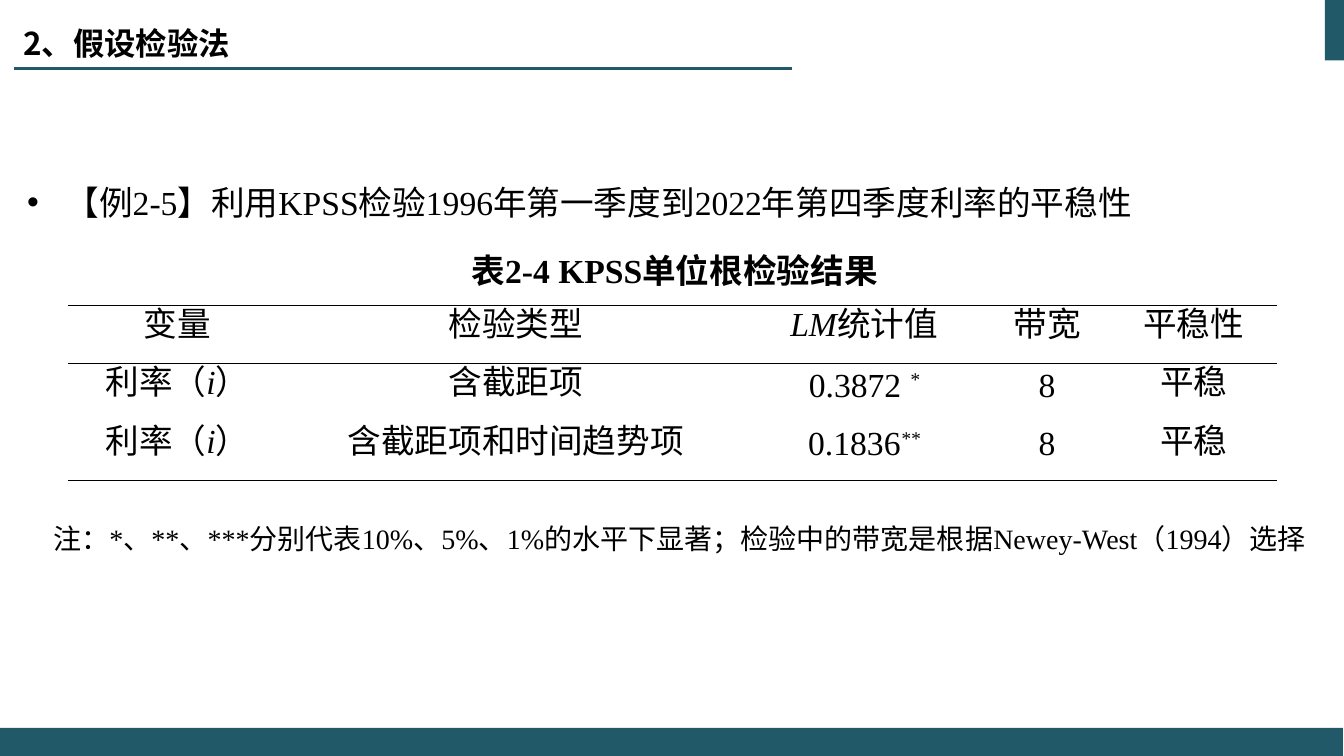
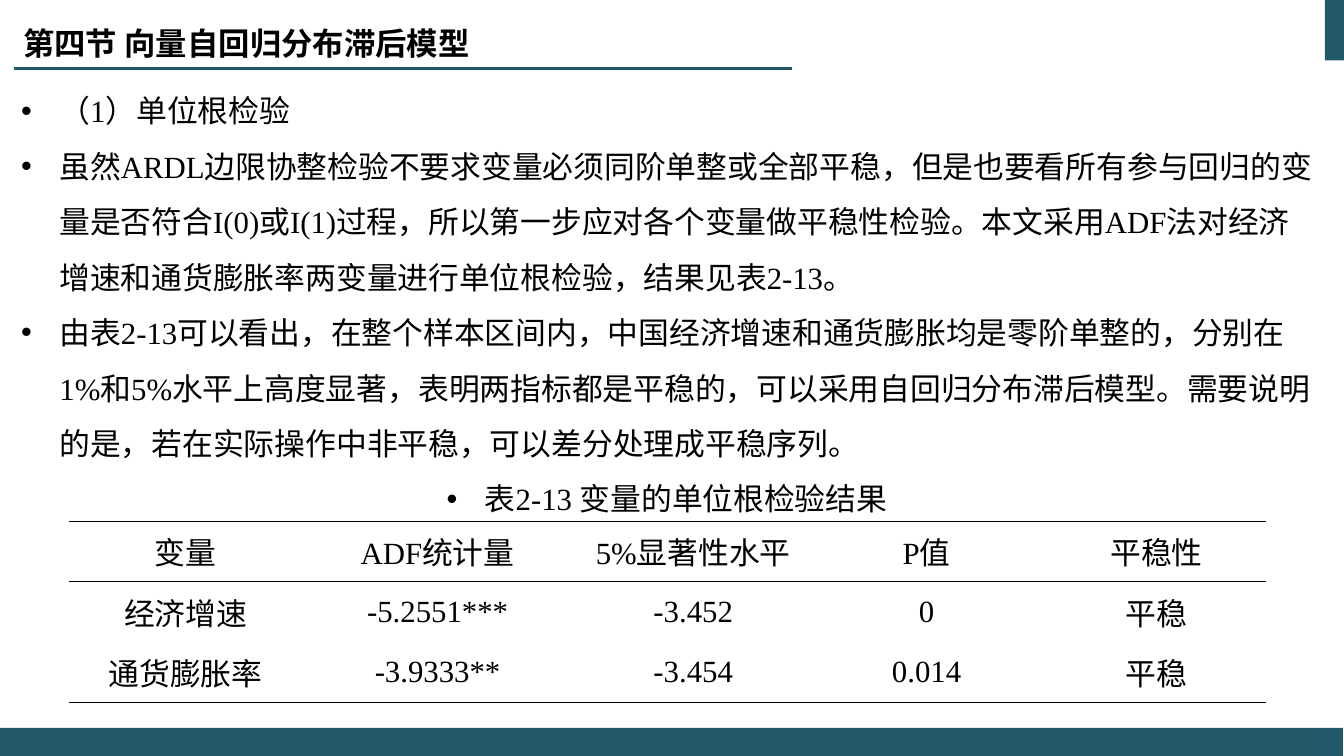
from dataclasses import dataclass

from lxml.etree import SubElement
from pptx import Presentation
from pptx.dml.color import RGBColor
from pptx.enum.shapes import MSO_CONNECTOR, MSO_SHAPE
from pptx.enum.text import MSO_ANCHOR, MSO_AUTO_SIZE, PP_ALIGN
from pptx.oxml.ns import qn
from pptx.util import Inches, Pt


@dataclass(frozen=True)
class Theme:
    teal: RGBColor = RGBColor(0x21, 0x59, 0x68)
    ink: RGBColor = RGBColor(0, 0, 0)
    latin: str = "Times New Roman"
    cjk: str = "Noto Sans CJK SC"
    title_size: int = 28
    note_size: int = 20
    rule_width: float = 1
    line_height: float = 1.2


THEME = Theme()

# Content: (kind, text) paragraphs and table rows; a cell may hold (text, style) runs
RATE = [("利率（", ""), ("i", "italic"), ("）", "")]
SLIDES = [
    {
        "title": "2、假设检验法",
        "title_width": 5.91,
        "body_box": (0.17, 1.47, 13.04, 4.9),
        "size": 24,
        "spacing": 1.7,
        "body": [
            ("bullet", "【例2-5】利用KPSS检验1996年第一季度到2022年第四季度利率的平稳性"),
            ("caption", "表2-4 KPSS单位根检验结果"),
            ("note", "注：*、**、***分别代表10%、5%、1%的水平下显著；"
                     "检验中的带宽是根据Newey-West（1994）选择"),
        ],
        "table_at": (0.67, 3.03),
        "columns": (2.18, 4.53, 2.38, 1.25, 1.66),
        "row_height": 0.58,
        "cell_line": 16,
        "cell_indent": 0,
        "rows": [
            ["变量", "检验类型", [("LM", "italic"), ("统计值", "")], "带宽", "平稳性"],
            [RATE, "含截距项", [("0.3872 ", ""), ("*", "super")], "8", "平稳"],
            [RATE, "含截距项和时间趋势项", [("0.1836", ""), ("**", "super")], "8", "平稳"],
        ],
    },
    {
        "title": "第四节 向量自回归分布滞后模型",
        "title_width": 8.31,
        "body_box": (0.11, 0.68, 13.01, 4.49),
        "size": 22,
        "spacing": 1.5,
        "body": [
            ("bullet", "（1）单位根检验"),
            ("bullet", "虽然ARDL边限协整检验不要求变量必须同阶单整或全部平稳，但是也要看所有参与回归的"
                       "变量是否符合I(0)或I(1)过程，所以第一步应对各个变量做平稳性检验。本文采用ADF法对"
                       "经济增速和通货膨胀率两变量进行单位根检验，结果见表2-13。"),
            ("bullet", "由表2-13可以看出，在整个样本区间内，中国经济增速和通货膨胀均是零阶单整的，分别在"
                       "1%和5%水平上高度显著，表明两指标都是平稳的，可以采用自回归分布滞后模型。需要说"
                       "明的是，若在实际操作中非平稳，可以差分处理成平稳序列。"),
            ("bullet caption", "表2-13 变量的单位根检验结果"),
        ],
        "table_at": (0.68, 5.17),
        "columns": (2.25, 2.75, 2.32, 2.31, 2.25),
        "row_height": 0.6,
        "cell_line": None,
        "cell_indent": 0.07,
        "rows": [
            ["变量", "ADF统计量", "5%显著性水平", "P值", "平稳性"],
            ["经济增速", "-5.2551***", "-3.452", "0", "平稳"],
            ["通货膨胀率", "-3.9333**", "-3.454", "0.014", "平稳"],
        ],
    },
]


def style_run(run, size, latin=THEME.latin, bold=False):
    font = run.font
    font.size, font.bold = Pt(size), bold
    font.color.rgb = THEME.ink
    font.name = latin
    SubElement(run.font._element, qn("a:ea"), typeface=THEME.cjk)


def place(part, left, top, width, height):
    part.left, part.top = Inches(left), Inches(top)
    part.width, part.height = Inches(width), Inches(height)


def set_indent(paragraph, left, first=0, bullet=False):
    props = paragraph._p.get_or_add_pPr()
    props.set("marL", str(Inches(left)))
    props.set("indent", str(Inches(first)))
    if bullet:
        SubElement(props, qn("a:buFont"), typeface="Arial")
        SubElement(props, qn("a:buChar"), char="•")
    else:
        SubElement(props, qn("a:buNone"))


def add_bands(master, slide):
    """Draw the shared bands and title rule, then move them to the master."""
    corner = slide.shapes.add_shape(
        MSO_SHAPE.RECTANGLE, Inches(13.14), 0, Inches(0.2), Inches(0.6))
    footer = slide.shapes.add_shape(
        MSO_SHAPE.RECTANGLE, 0, Inches(7.22), Inches(13.32), Inches(0.28))
    for band in (corner, footer):
        band.shadow.inherit = False
        band.fill.solid()
        band.fill.fore_color.rgb = THEME.teal
        band.line.fill.background()
    title_rule = slide.shapes.add_connector(
        MSO_CONNECTOR.STRAIGHT, Inches(7.86), Inches(0.68), Inches(0.14), Inches(0.68))
    title_rule.line.color.rgb = THEME.teal
    title_rule.line.width = Pt(1.5)
    SubElement(title_rule.element.spPr, qn("a:effectLst"))
    for number, part in enumerate((corner, title_rule, footer)):
        part.element.xpath(".//p:cNvPr")[0].set("id", str(101 + number))
        master.shapes.element.insert(2 + number, part.element)


def fill_title(slide, content):
    title = slide.shapes.title
    place(title, 0.13, -0.03, content["title_width"], 0.85)
    frame = title.text_frame
    frame.text = content["title"]
    frame.auto_size = MSO_AUTO_SIZE.NONE
    frame.vertical_anchor = MSO_ANCHOR.MIDDLE
    paragraph = frame.paragraphs[0]
    paragraph.alignment = PP_ALIGN.LEFT
    run = paragraph.runs[0]
    style_run(run, THEME.title_size, THEME.cjk, bold=True)
    run.font._element.set("cap", "small")


def fill_body(slide, content):
    body = slide.placeholders[1]
    place(body, *content["body_box"])
    frame = body.text_frame
    frame.text = "\n".join(text for _, text in content["body"])
    frame.auto_size = MSO_AUTO_SIZE.NONE
    frame.vertical_anchor = MSO_ANCHOR.TOP
    for paragraph, (kind, _) in zip(frame.paragraphs, content["body"]):
        is_note = kind == "note"
        size = THEME.note_size if is_note else content["size"]
        if "bullet" in kind:
            set_indent(paragraph, 0.38, -0.38, bullet=True)
        else:
            set_indent(paragraph, 0.1 if is_note else 0)
        paragraph.alignment = PP_ALIGN.LEFT if kind == "bullet" else PP_ALIGN.CENTER
        paragraph.line_spacing = Pt(round(size * content["spacing"] * THEME.line_height, 1))
        paragraph.space_before = Pt(148 if is_note else 0)
        style_run(paragraph.runs[0], size, bold=kind == "caption")


def set_borders(cell, ruled):
    props = cell._tc.get_or_add_tcPr()
    for side in ("lnL", "lnR", "lnT", "lnB"):
        border = SubElement(props, qn(f"a:{side}"), w=str(Pt(THEME.rule_width)))
        if side in ruled:
            fill = SubElement(border, qn("a:solidFill"))
            SubElement(fill, qn("a:srgbClr"), val=str(THEME.ink))
        else:
            SubElement(border, qn("a:noFill"))


def fill_cell(cell, value, content):
    cell.margin_left = cell.margin_right = Inches(0.07)
    cell.margin_top = cell.margin_bottom = 0
    cell.vertical_anchor = MSO_ANCHOR.MIDDLE
    paragraph = cell.text_frame.paragraphs[0]
    set_indent(paragraph, content["cell_indent"])
    paragraph.alignment = PP_ALIGN.CENTER
    if content["cell_line"]:
        paragraph.line_spacing = Pt(content["cell_line"])
    for text, style in [(value, "")] if isinstance(value, str) else value:
        run = paragraph.add_run()
        run.text = text
        style_run(run, content["size"])
        run.font.italic = style != ""
        if style == "super":
            run.font._element.set("baseline", "30000")


def add_results(slide, content):
    rows, widths = content["rows"], content["columns"]
    left, top = content["table_at"]
    height = content["row_height"]
    results = slide.shapes.add_table(
        len(rows), len(widths), Inches(left), Inches(top),
        Inches(sum(widths)), Inches(height * len(rows))).table
    results.first_row = results.horz_banding = False
    for column, width in zip(results.columns, widths):
        column.width = Inches(width)
    # Three-line table: rules above and below the header, and at the foot
    rules = [("lnT", "lnB"), ("lnT",), ("lnB",)]
    for r, (values, ruled) in enumerate(zip(rows, rules)):
        results.rows[r].height = Inches(height)
        for c, value in enumerate(values):
            cell = results.cell(r, c)
            set_borders(cell, ruled)
            cell.fill.background()
            fill_cell(cell, value, content)


def main():
    prs = Presentation()
    prs.slide_width, prs.slide_height = Inches(13.33), Inches(7.5)
    for number, content in enumerate(SLIDES):
        slide = prs.slides.add_slide(prs.slide_layouts[1])
        if number == 0:
            add_bands(prs.slide_master, slide)
        fill_title(slide, content)
        fill_body(slide, content)
        add_results(slide, content)
    prs.save("out.pptx")


if __name__ == "__main__":
    main()
